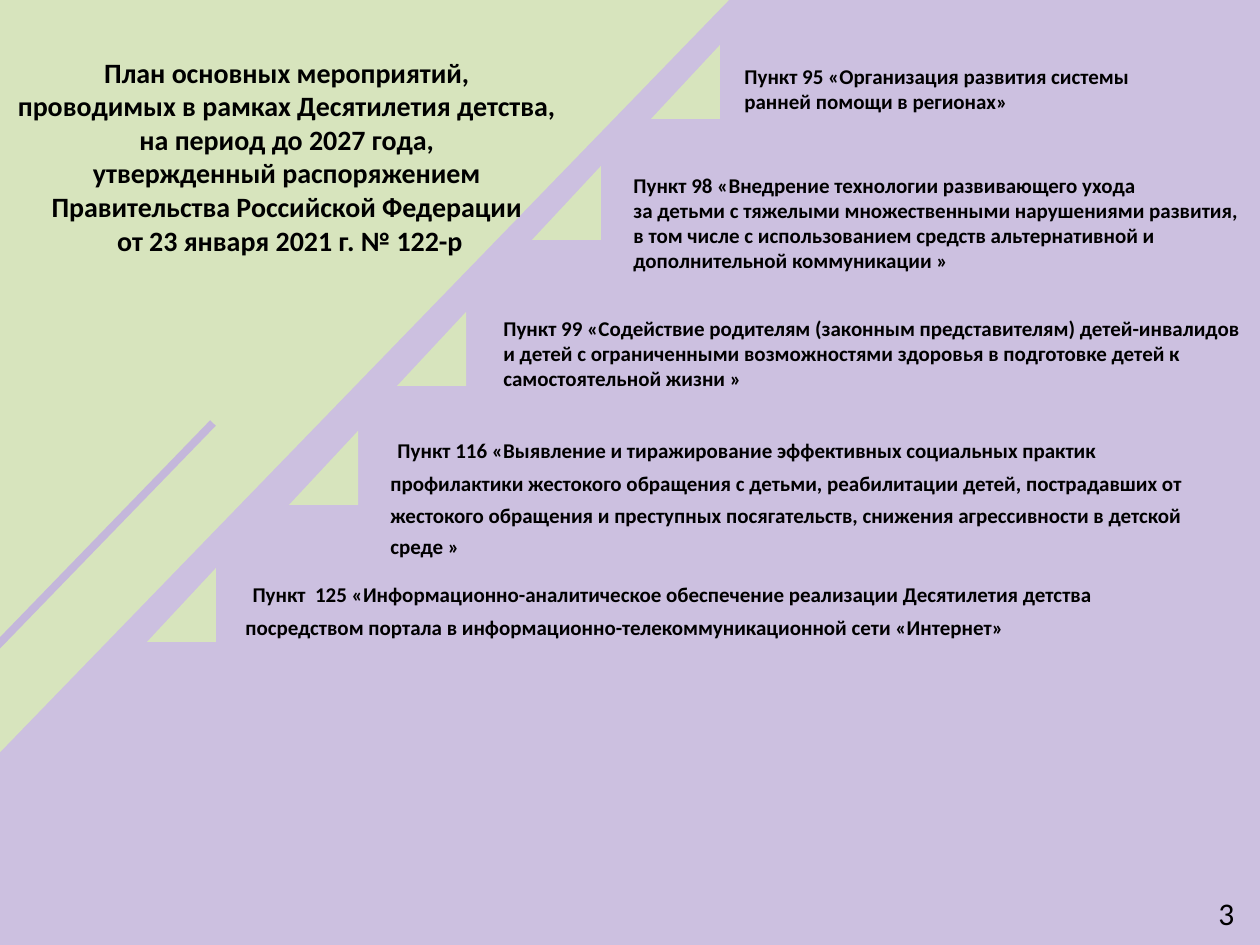
"""Build the slide listing the Decade of Childhood plan items beside a diagonal of triangles."""
from lxml.etree import SubElement
from pptx import Presentation
from pptx.dml.color import RGBColor
from pptx.enum.shapes import MSO_CONNECTOR, MSO_SHAPE
from pptx.enum.text import MSO_AUTO_SIZE, PP_ALIGN
from pptx.oxml.ns import qn
from pptx.util import Inches, Pt

PX = Inches(10) / 1260
GREEN = RGBColor(0xD7, 0xE4, 0xBD)
LILAC = RGBColor(0xC4, 0xB7, 0xDB)
PALE_LILAC = RGBColor(0xCC, 0xC0, 0xE0)
BLACK = RGBColor(0, 0, 0)

TITLE = """План основных мероприятий, 
проводимых в рамках Десятилетия детства, 
на период до 2027 года, 
утвержденный распоряжением 
Правительства Российской Федерации 
от 23 января 2021 г. № 122-р"""

ITEMS = [
    ((651, 45), (732, 57, 573, 63), False,
     "Пункт 95 «Организация развития системы\n"
     "ранней помощи в регионах»"),
    ((532, 166), (621, 166, 639, 115), False,
     "Пункт 98 «Внедрение технологии развивающего ухода\n"
     "за детьми с тяжелыми множественными нарушениями развития, в том числе "
     "с использованием средств альтернативной и дополнительной коммуникации »"),
    ((397, 312), (491, 309, 769, 89), False,
     "Пункт 99 «Содействие родителям (законным представителям) детей-инвалидов "
     "и детей с ограниченными возможностями здоровья в подготовке детей "
     "к самостоятельной жизни »"),
    ((289, 431), (378, 427, 858, 140), True,
     "Пункт 116 «Выявление и тиражирование эффективных социальных практик "
     "профилактики жестокого обращения с детьми, реабилитации детей, пострадавших "
     "от жестокого обращения и преступных посягательств, снижения агрессивности "
     "в детской среде »"),
    ((147, 568), (233, 571, 873, 77), True,
     "Пункт  125 «Информационно-аналитическое обеспечение реализации Десятилетия "
     "детства посредством портала в информационно-телекоммуникационной сети «Интернет»"),
]


def add_triangle(page, area, apex):
    triangle = page.shapes.add_shape(
        MSO_SHAPE.ISOSCELES_TRIANGLE, *(round(v * PX) for v in area))
    triangle.adjustments[0] = apex
    triangle.fill.solid()
    triangle.fill.fore_color.rgb = GREEN
    triangle.line.fill.background()
    triangle.shadow.inherit = False
    return triangle


def add_text(page, area, text, size, bold=True, align=None, wrap=True):
    box = page.shapes.add_textbox(*(round(v * PX) for v in area))
    frame = box.text_frame
    frame.text = text
    frame.word_wrap = wrap
    frame.auto_size = MSO_AUTO_SIZE.SHAPE_TO_FIT_TEXT
    for para in frame.paragraphs:
        para.alignment = align
        for span in para.runs:
            span.font.name = "Calibri"
            span.font.size = Pt(size)
            span.font.bold = bold
            span.font.color.rgb = BLACK
    return box


deck = Presentation()
deck.slide_width = Inches(10)
deck.slide_height = Inches(7.5)
page = deck.slides.add_slide(deck.slide_layouts[6])
page.background.fill.solid()
page.background.fill.fore_color.rgb = PALE_LILAC

corner = add_triangle(page, (-354, -78, 1056, 534), 0.51)
corner.rotation = 314.1

stripe = page.shapes.add_connector(
    MSO_CONNECTOR.STRAIGHT, *(round(v * PX) for v in (-5, 648, 213, 423)))
stripe.line.color.rgb = LILAC
stripe.line.width = Pt(4.5)
SubElement(stripe._element.spPr, qn("a:effectLst"))

for (left, top), area, spaced, text in ITEMS:
    add_triangle(page, (left, top, 69, 74), 1)
    if not spaced:
        add_text(page, area, text, 12)
        continue
    box = add_text(page, area, " ", 18, bold=False)
    para = box.text_frame.paragraphs[0]
    para.line_spacing = Pt(18)
    span = para.add_run()
    span.text = text
    span.font.name = "Calibri"
    span.font.size = Pt(12)
    span.font.bold = True
    span.font.color.rgb = BLACK

add_text(page, (-49, 49, 678, 217), TITLE, 16, align=PP_ALIGN.CENTER)
add_text(page, (1206, 888, 42, 50), "3", 18, bold=False, wrap=False)

deck.save("out.pptx")
